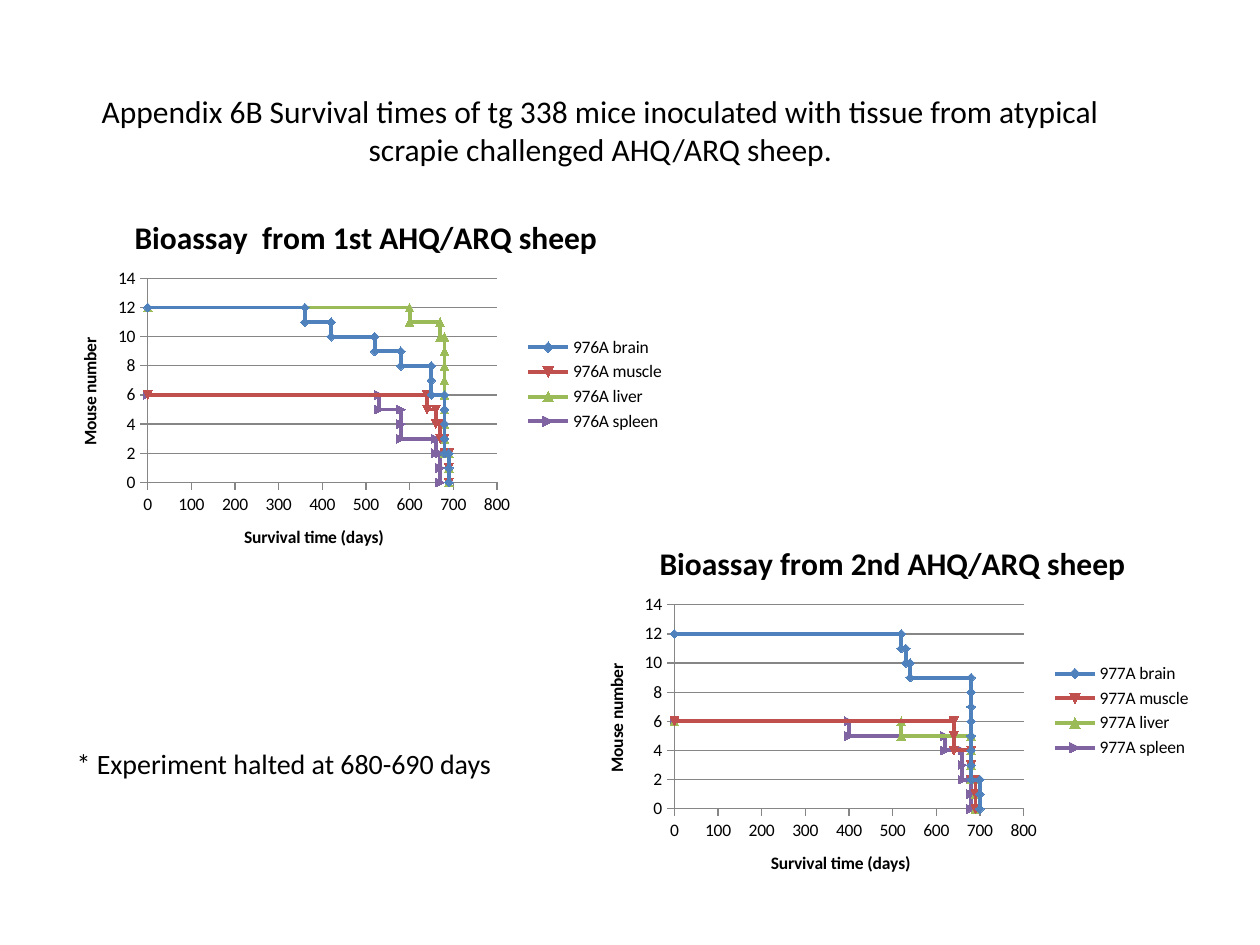
from dataclasses import dataclass

from lxml import etree
from pptx import Presentation
from pptx import util as u
from pptx.chart.data import XyChartData
from pptx.dml.color import RGBColor
from pptx.enum import chart as charts, text
from pptx.oxml import ns


@dataclass(frozen=True)
class Theme:
    font: str = "Calibri"
    ink: str = "000000"
    grid: str = "868686"
    series: tuple = ("4F81BD", "C0504D", "9BBB59", "8064A2")
    heading: int = 18
    note: int = 16
    label: int = 10
    curve: float = 2.25
    rule: float = 0.75


THEME = Theme()
TISSUES = ("brain", "muscle", "liver", "spleen")
PLOT_LAYOUT = {"x": 0.15, "y": 0.22, "w": 0.56, "h": 0.54}

FIRST_SHEEP = (
    [360, 420, 520, 580] + [650] * 2 + [680] * 4 + [690] * 2,
    [640, 660, 670, 680, 690, 690],
    [600, 670] + [680] * 8 + [690] * 2,
    [530, 580, 580, 660, 670, 670],
)
SECOND_SHEEP = (
    [520, 530, 540] + [680] * 7 + [700] * 2,
    [640, 640, 680, 680, 690, 690],
    [520, 680, 680, 680, 690, 690],
    [400, 620, 660, 660, 680, 680],
)


def apply_format(target, values):
    for name, value in values.items():
        setattr(target, name, value)


def style_font(font, size, bold=False):
    apply_format(font, {"name": THEME.font, "size": u.Pt(size), "bold": bold})
    font.color.rgb = RGBColor.from_string(THEME.ink)


def style_line(line, color, width):
    line.color.rgb = RGBColor.from_string(color)
    line.width = u.Pt(width)


def add_text(page, bounds, words, size, align):
    box = page.shapes.add_textbox(*map(u.Inches, bounds))
    frame = box.text_frame
    apply_format(frame, {"word_wrap": True,
                         "auto_size": text.MSO_AUTO_SIZE.SHAPE_TO_FIT_TEXT})
    para = frame.paragraphs[0]
    para.alignment = align
    span = para.add_run()
    span.text = words
    style_font(span.font, size)


def set_title(owner, words, size):
    para = owner.text_frame.paragraphs[0]
    span = para.add_run()
    span.text = words
    style_font(span.font, size, bold=True)


def survival_steps(deaths):
    alive = len(deaths)
    yield 0, alive
    for day in deaths:
        yield day, alive
        alive -= 1
        yield day, alive


def style_axis(axis, words, maximum, step, gridlines):
    apply_format(axis, {
        "minimum_scale": 0, "maximum_scale": maximum, "major_unit": step,
        "has_major_gridlines": gridlines,
        "major_tick_mark": charts.XL_TICK_MARK.OUTSIDE,
        "minor_tick_mark": charts.XL_TICK_MARK.NONE,
    })
    style_line(axis.format.line, THEME.grid, THEME.rule)
    if gridlines:
        style_line(axis.major_gridlines.format.line, THEME.grid, THEME.rule)
    style_font(axis.tick_labels.font, THEME.label)
    set_title(axis.axis_title, words, THEME.label)


def place_plot(chart):
    area = chart.plots[0]._element.getparent()
    for old in area.findall(ns.qn("c:layout")):
        area.remove(old)
    layout = etree.Element(ns.qn("c:layout"))
    manual = etree.SubElement(layout, ns.qn("c:manualLayout"))
    settings = {"layoutTarget": "inner", "xMode": "edge", "yMode": "edge"}
    for name, value in {**settings, **PLOT_LAYOUT}.items():
        etree.SubElement(manual, ns.qn(f"c:{name}"), val=str(value))
    area.insert(0, layout)


def add_survival_chart(page, left, top, words, animal, groups):
    data = XyChartData()
    for tissue, deaths in zip(TISSUES, groups):
        series = data.add_series(f"{animal} {tissue}")
        for day, alive in survival_steps(deaths):
            series.add_data_point(day, alive)
    chart = page.shapes.add_chart(
        charts.XL_CHART_TYPE.XY_SCATTER_LINES, u.Inches(left), u.Inches(top),
        u.Inches(4.95), u.Inches(3), data).chart
    style_font(chart.font, THEME.label)
    apply_format(chart, {"has_title": True, "has_legend": True})
    set_title(chart.chart_title, words, THEME.heading)
    apply_format(chart.legend, {"position": charts.XL_LEGEND_POSITION.RIGHT,
                                "include_in_layout": False})
    style_font(chart.legend.font, THEME.label)
    style_axis(chart.category_axis, "Survival time (days)", 800, 100, False)
    style_axis(chart.value_axis, "Mouse number", 14, 2, True)
    plot = chart.plots[0]
    plot.vary_by_categories = False
    for series, color in zip(plot.series, THEME.series):
        series.smooth = False
        style_line(series.format.line, color, THEME.curve)
        marker = series.marker.format
        marker.fill.solid()
        marker.fill.fore_color.rgb = RGBColor.from_string(color)
        style_line(marker.line, color, THEME.rule)
    place_plot(chart)


def main():
    deck = Presentation()
    apply_format(deck, {"slide_width": u.Inches(10), "slide_height": u.Inches(7.5)})
    page = deck.slides.add_slide(deck.slide_layouts[6])
    add_survival_chart(page, 0.43, 1.55, "Bioassay  from 1st AHQ/ARQ sheep",
                       "976A", FIRST_SHEEP)
    add_text(page, (0.59, 0.68, 8.35, 0.71),
             "Appendix 6B Survival times of tg 338 mice inoculated with tissue "
             "from atypical scrapie challenged AHQ/ARQ sheep.",
             THEME.heading, text.PP_ALIGN.CENTER)
    add_survival_chart(page, 4.61, 4.14, "Bioassay from 2nd AHQ/ARQ sheep",
                       "977A", SECOND_SHEEP)
    add_text(page, (0.51, 5.88, 3.7, 0.37), "* Experiment halted at 680-690 days",
             THEME.note, text.PP_ALIGN.LEFT)
    deck.save("out.pptx")


if __name__ == "__main__":
    main()
